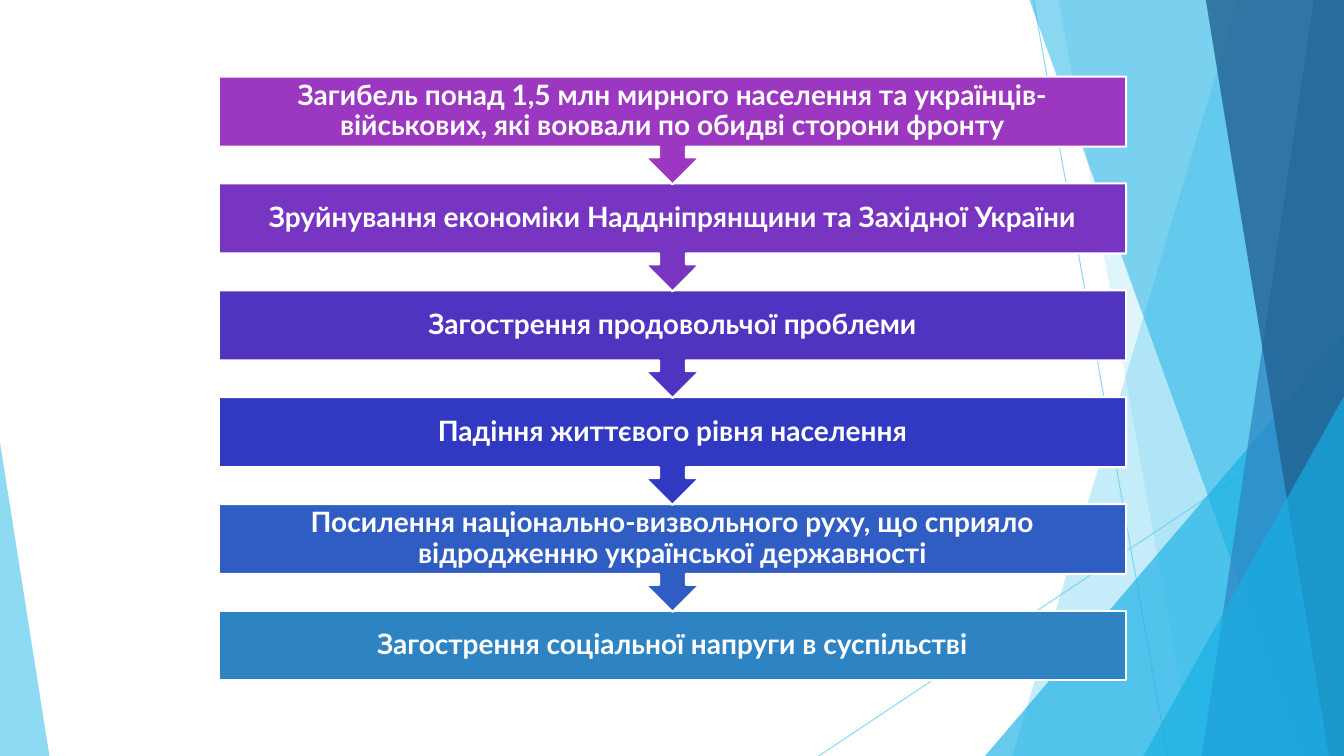
from lxml import etree
from pptx import Presentation
from pptx.dml.color import RGBColor
from pptx.enum import shapes as kinds, text as txt
from pptx.oxml.ns import qn
from pptx.util import Inches, Pt

WHITE = RGBColor(0xFF, 0xFF, 0xFF)
SKY = RGBColor(0x5F, 0xCB, 0xEF)
CYAN = RGBColor(0x17, 0xB0, 0xE4)
BLUE = RGBColor(0x2E, 0x83, 0xC3)
NAVY = RGBColor(0x22, 0x62, 0x92)
ROYAL = RGBColor(0x30, 0x5D, 0xC3)
INDIGO = RGBColor(0x31, 0x39, 0xC2)
VIOLET = RGBColor(0x51, 0x33, 0xC2)
PURPLE = RGBColor(0x77, 0x35, 0xC2)
MAGENTA = RGBColor(0x9C, 0x37, 0xC1)

WIDTH, HEIGHT = 13.33, 7.5


def set_opacity(color_format_owner, percent):
    """Add an alpha value to every solid colour below the given element."""
    for color in color_format_owner.iter(qn("a:srgbClr")):
        etree.SubElement(color, qn("a:alpha")).set("val", str(percent * 1000))


def paint_facet(facet, color, percent):
    facet.shadow.inherit = False
    facet.fill.solid()
    facet.fill.fore_color.rgb = color
    facet.line.fill.background()
    set_opacity(facet._element.spPr, percent)


prs = Presentation()
prs.slide_width, prs.slide_height = Inches(WIDTH), Inches(HEIGHT)
slide = prs.slides.add_slide(prs.slide_layouts[6])

# Thin crossing rays
for x1, y1, x2, y2 in [(10.25, 0, 11.58, HEIGHT), (WIDTH, 4.03, 8.12, HEIGHT)]:
    ray = slide.shapes.add_connector(
        kinds.MSO_CONNECTOR.STRAIGHT, Inches(x1), Inches(y1), Inches(x2), Inches(y2))
    ray.line.color.rgb = SKY
    ray.line.width = Pt(0.75)
    set_opacity(ray._element.spPr, 70)
    etree.SubElement(ray._element.spPr, qn("a:effectLst"))

# Facets from back to front. Bands run to the right edge: top x, bottom x.
# Wedges stand on the bottom edge: left, top, width, apex position.
facets = [
    ("band", (12.28, 10.04), SKY, 36),
    ("band", (10.5, 11.83), SKY, 20),
    ("wedge", (9.77, 3.33, 3.56, 1), CYAN, 66),
    ("band", (10.21, 12.91), CYAN, 50),
    ("band", (13.03, 11.92), BLUE, 70),
    ("band", (11.96, 13.18), NAVY, 80),
    ("wedge", (11.34, 3.93, 1.99, 1), CYAN, 66),
    ("wedge", (0, 4.39, 0.49, 0), SKY, 70),
]
for form, geometry, color, percent in facets:
    if form == "band":
        top_x, bottom_x = geometry
        outline = slide.shapes.build_freeform(Inches(top_x), 0)
        outline.add_line_segments(
            [(Inches(x), Inches(y)) for x, y in
             [(WIDTH, 0), (WIDTH, HEIGHT), (bottom_x, HEIGHT)]], close=True)
        facet = outline.convert_to_shape()
    else:
        left, top, width, apex = geometry
        facet = slide.shapes.add_shape(
            kinds.MSO_SHAPE.ISOSCELES_TRIANGLE,
            Inches(left), Inches(top), Inches(width), Inches(HEIGHT - top))
        facet.adjustments[0] = apex
    paint_facet(facet, color, percent)

# Chain of consequences; each step overlaps the one below it
consequences = [
    ("Загибель понад 1,5 млн мирного населення та українців-військових, "
     "які воювали по обидві сторони фронту", MAGENTA),
    ("Зруйнування економіки Наддніпрянщини та Західної України", PURPLE),
    ("Загострення продовольчої проблеми", VIOLET),
    ("Падіння життєвого рівня населення", INDIGO),
    ("Посилення національно-визвольного руху, що сприяло "
     "відродженню української державності", ROYAL),
    ("Загострення соціальної напруги в суспільстві", BLUE),
]
STEP_LEFT, STEP_TOP, STEP_WIDTH, STEP_PITCH = 2.17, 0.76, 9, 1.06
BOX_HEIGHT, CALLOUT_HEIGHT = 0.69, 1.07
last = len(consequences) - 1

for index, (wording, color) in reversed(list(enumerate(consequences))):
    form, height = kinds.MSO_SHAPE.DOWN_ARROW_CALLOUT, CALLOUT_HEIGHT
    if index == last:
        form, height = kinds.MSO_SHAPE.RECTANGLE, BOX_HEIGHT
    step = slide.shapes.add_shape(
        form, Inches(STEP_LEFT), Inches(STEP_TOP + index * STEP_PITCH),
        Inches(STEP_WIDTH), Inches(height))
    step.shadow.inherit = False
    step.fill.solid()
    step.fill.fore_color.rgb = color
    step.line.color.rgb = WHITE
    step.line.width = Pt(1.5)

    frame = step.text_frame
    frame.word_wrap = True
    frame.vertical_anchor = txt.MSO_ANCHOR.MIDDLE
    frame.margin_left = frame.margin_right = Inches(0.16)
    frame.margin_top = frame.margin_bottom = 0
    paragraph = frame.paragraphs[0]
    paragraph.alignment = txt.PP_ALIGN.CENTER
    paragraph.line_spacing = 0.9
    run = paragraph.add_run()
    run.text = wording
    run.font.name = "Lato"
    run.font.size = Pt(20)
    run.font.bold = True
    run.font.color.rgb = WHITE

prs.save("out.pptx")
